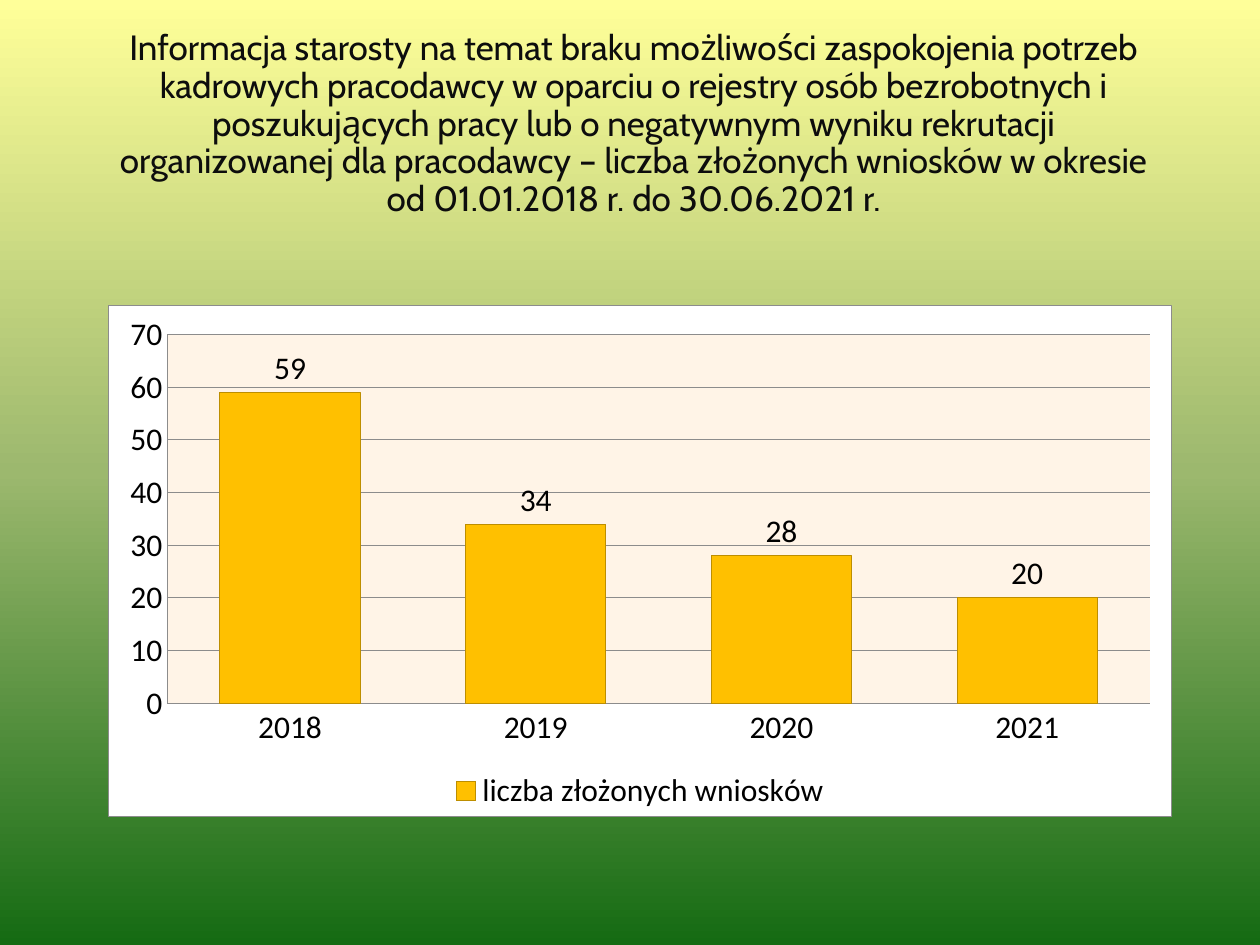
from dataclasses import dataclass

import pptx
import pptx.chart.data
import pptx.dml.color
import pptx.enum.chart
import pptx.enum.text
import pptx.oxml
import pptx.oxml.ns
import pptx.util
from pptx.util import Inches


@dataclass(frozen=True)
class Theme:
    background = ((0, "FFFF99"), (50, "9CB86E"), (100, "156B13"))
    title_color: str = "0D0D0D"
    title_font: str = "Cabin"
    title_size: int = 20
    chart_color: str = "000000"
    chart_font: str = "Calibri"
    chart_size: int = 18
    panel: str = "FFFFFF"
    plot: str = "FFF4E7"
    rule: str = "8C8C8C"
    bar: str = "FFC000"
    bar_edge: str = "BD8E00"
    line_width: float = 0.5


THEME = Theme()
TITLE = (
    "Informacja starosty na temat braku możliwości zaspokojenia potrzeb "
    "kadrowych pracodawcy w oparciu o rejestry osób bezrobotnych i "
    "poszukujących pracy lub o negatywnym wyniku rekrutacji organizowanej "
    "dla pracodawcy – liczba złożonych wniosków w okresie "
    "od 01.01.2018 r. do 30.06.2021 r."
)
APPLICATIONS = {"2018": 59, "2019": 34, "2020": 28, "2021": 20}


def set_all(obj, values):
    for name, value in values.items():
        setattr(obj, name, value)


def rgb(color):
    return pptx.dml.color.RGBColor.from_string(color)


def parse_xml(tag, content):
    ns = pptx.oxml.ns.nsdecls("a", "c")
    return pptx.oxml.parse_xml(f"<{tag} {ns}>{content}</{tag}>")


def set_font(font, name, size, color):
    set_all(font, {"name": name, "size": pptx.util.Pt(size), "bold": False})
    font.color.rgb = rgb(color)


def set_line(line, color):
    line.color.rgb = rgb(color)
    line.width = pptx.util.Pt(THEME.line_width)


def set_background(s):
    fill = s.background.fill
    fill.gradient()
    fill.gradient_angle = 270
    stops = "".join(
        f'<a:gs pos="{pos * 1000}"><a:srgbClr val="{color}"/></a:gs>'
        for pos, color in THEME.background
    )
    old = s.element.find(".//" + pptx.oxml.ns.qn("a:gsLst"))
    old.getparent().replace(old, parse_xml("a:gsLst", stops))


def add_title(s):
    sp = s.shapes.title
    set_all(sp, {"left": Inches(0.78), "top": Inches(0.62),
                 "width": Inches(8.5), "height": Inches(1.17)})
    tf = sp.text_frame
    set_all(tf, {"word_wrap": True,
                 "auto_size": pptx.enum.text.MSO_AUTO_SIZE.NONE,
                 "vertical_anchor": pptx.enum.text.MSO_ANCHOR.BOTTOM})
    p = tf.paragraphs[0]
    set_all(p, {"alignment": pptx.enum.text.PP_ALIGN.CENTER,
                "line_spacing": 0.9})
    r = p.add_run()
    r.text = TITLE
    set_font(r.font, THEME.title_font, THEME.title_size, THEME.title_color)


def area_format(color, line):
    return parse_xml(
        "c:spPr",
        f'<a:solidFill><a:srgbClr val="{color}"/></a:solidFill>{line}')


def format_areas(chart):
    """Fill the chart and plot areas and fix the inner plot rectangle."""
    qn = pptx.oxml.ns.qn
    body = chart.element.find(qn("c:chart"))
    width = int(pptx.util.Pt(THEME.line_width))
    body.addnext(area_format(
        THEME.panel,
        f'<a:ln w="{width}"><a:solidFill><a:srgbClr val="{THEME.rule}"/>'
        "</a:solidFill></a:ln>"))
    plot_area = body.find(qn("c:plotArea"))
    plot_area.append(area_format(THEME.plot, "<a:ln><a:noFill/></a:ln>"))
    for old in plot_area.findall(qn("c:layout")):
        plot_area.remove(old)
    values = {"layoutTarget": "inner", "xMode": "edge", "yMode": "edge",
              "x": 0.055, "y": 0.057, "w": 0.925, "h": 0.722}
    layout = "".join(f'<c:{k} val="{v}"/>' for k, v in values.items())
    plot_area.insert(0, parse_xml(
        "c:layout", f"<c:manualLayout>{layout}</c:manualLayout>"))


def format_axis(axis):
    none = pptx.enum.chart.XL_TICK_MARK.NONE
    set_all(axis, {"major_tick_mark": none, "minor_tick_mark": none})
    set_line(axis.format.line, THEME.rule)


def add_column_chart(s):
    data = pptx.chart.data.CategoryChartData()
    data.categories = list(APPLICATIONS)
    data.add_series("liczba złożonych wniosków", APPLICATIONS.values())
    chart = s.shapes.add_chart(
        pptx.enum.chart.XL_CHART_TYPE.COLUMN_CLUSTERED,
        Inches(0.86), Inches(2.42), Inches(8.44), Inches(4.06), data).chart
    set_all(chart, {"has_title": False, "has_legend": True})
    set_all(chart.legend, {
        "position": pptx.enum.chart.XL_LEGEND_POSITION.BOTTOM,
        "include_in_layout": False})

    format_axis(chart.category_axis)
    axis = chart.value_axis
    format_axis(axis)
    set_all(axis, {"minimum_scale": 0, "maximum_scale": 70, "major_unit": 10})
    set_line(axis.major_gridlines.format.line, THEME.rule)

    plot = chart.plots[0]
    set_all(plot, {"gap_width": 75, "overlap": -25,
                   "vary_by_categories": False})
    series = plot.series[0]
    series.format.fill.solid()
    series.format.fill.fore_color.rgb = rgb(THEME.bar)
    set_line(series.format.line, THEME.bar_edge)
    labels = series.data_labels
    set_all(labels, {
        "show_value": True,
        "position": pptx.enum.chart.XL_LABEL_POSITION.OUTSIDE_END})

    for part in (chart, chart.legend, labels):
        set_font(part.font, THEME.chart_font, THEME.chart_size,
                 THEME.chart_color)
    for axis in (chart.category_axis, chart.value_axis):
        set_font(axis.tick_labels.font, THEME.chart_font, THEME.chart_size,
                 THEME.chart_color)
    format_areas(chart)


def main():
    prs = pptx.Presentation()
    set_all(prs, {"slide_width": Inches(10), "slide_height": Inches(7.5)})
    s = prs.slides.add_slide(prs.slide_layouts.get_by_name("Title Only"))
    set_background(s)
    add_title(s)
    add_column_chart(s)
    prs.save("out.pptx")


if __name__ == "__main__":
    main()
